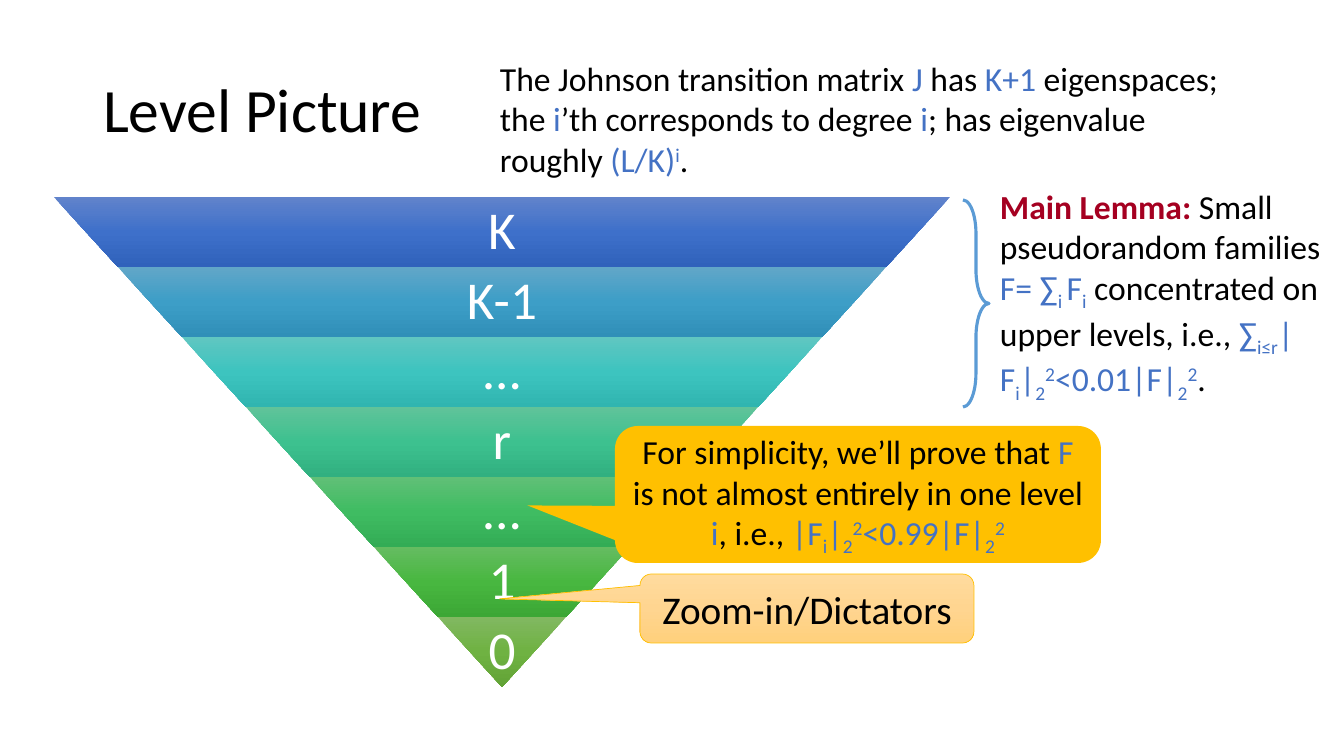
from copy import deepcopy

from pptx import Presentation
from pptx.dml.color import RGBColor
from pptx.enum.shapes import MSO_SHAPE
from pptx.enum.text import MSO_ANCHOR, PP_ALIGN
from pptx.oxml.ns import qn
from pptx.util import Pt

PX = 914400 / 100.8
BLACK, BLUE, RED, WHITE = "000000", "4472C4", "A50021", "FFFFFF"
SUB, SUPER = -25000, 30000


def px(*lengths):
    return [round(length * PX) for length in lengths]


def color(value):
    return RGBColor.from_string(value)


presentation = Presentation()
presentation.slide_width, presentation.slide_height = px(1344, 756)
slide = presentation.slides.add_slide(presentation.slide_layouts[5])
shapes = slide.shapes

title = shapes.title
title.left, title.top, title.width, title.height = px(93, 40, 1159, 146)
title.text_frame.text = "Level Picture"
title.text_frame.vertical_anchor = MSO_ANCHOR.MIDDLE
paragraph = title.text_frame.paragraphs[0]
paragraph.alignment = PP_ALIGN.LEFT
paragraph.line_spacing = 0.9
paragraph.font.name = "Calibri"
paragraph.font.size = Pt(44)
paragraph.font.color.rgb = color(BLACK)

levels = [
    ("K", ["6183CB", "3E70CA", "3062BB"]),
    ("K-1", ["61A6C8", "3D9EC7", "308FB8"]),
    ("…", ["60C6C1", "3DC4BF", "30B5B0"]),
    ("r", ["60C39A", "3DC18F", "31B080"]),
    ("...", ["60C077", "3FBC62", "33AC55"]),
    ("1", ["65BC61", "48B740", "3CA735"]),
    ("0", ["81B861", "6FB242", "62A336"]),
]
FUNNEL_CENTER, FUNNEL_TOP, LEVEL_HEIGHT, SLANT = 502, 197, 70, 64
gradients = []
for index, (label, stops) in enumerate(levels):
    half_width = SLANT * (len(levels) - index)
    top = FUNNEL_TOP + LEVEL_HEIGHT * index
    band = shapes.add_shape(
        MSO_SHAPE.TRAPEZOID,
        *px(FUNNEL_CENTER - half_width, top, 2 * half_width, LEVEL_HEIGHT))
    band.rotation = 180
    band.adjustments[0] = SLANT / LEVEL_HEIGHT
    band.shadow.inherit = False
    band.line.fill.background()
    gradients.append((band, stops))

    text_half = max(SLANT, round(half_width * 0.65))
    box = shapes.add_textbox(
        *px(FUNNEL_CENTER - text_half, top, 2 * text_half, LEVEL_HEIGHT))
    frame = box.text_frame
    frame.word_wrap = True
    frame.vertical_anchor = MSO_ANCHOR.MIDDLE
    frame.margin_left = frame.margin_right = px(5)[0]
    frame.margin_top = frame.margin_bottom = px(5)[0]
    frame.text = label
    paragraph = frame.paragraphs[0]
    paragraph.alignment = PP_ALIGN.CENTER
    paragraph.line_spacing = 0.9
    paragraph.font.name = "Calibri"
    paragraph.font.size = Pt(38)
    paragraph.font.color.rgb = color(WHITE)

eigenspaces = shapes.add_textbox(*px(490, 53, 770, 132))

dictators = shapes.add_shape(
    MSO_SHAPE.ROUNDED_RECTANGULAR_CALLOUT, *px(640, 574, 334, 69))
dictators.adjustments[0] = -0.92
dictators.adjustments[1] = -0.14
dictators.line.color.rgb = color("FFC000")
dictators.line.width = Pt(0.5)
gradients.append((dictators, ["FFDB9E", "FFD590", "FFD07C"]))

simplicity = shapes.add_shape(
    MSO_SHAPE.ROUNDED_RECTANGULAR_CALLOUT, *px(615, 426, 486, 137))
simplicity.adjustments[0] = -0.68
simplicity.adjustments[1] = 0.08
simplicity.fill.solid()
simplicity.fill.fore_color.rgb = color("FFC000")
simplicity.line.fill.background()

brace = shapes.add_shape(MSO_SHAPE.RIGHT_BRACE, *px(963, 200, 26, 207))
brace.adjustments[0] = 1.3
brace.shadow.inherit = False
brace.fill.background()
brace.line.color.rgb = color("5B9BD5")
brace.line.width = Pt(2.25)

lemma = shapes.add_textbox(*px(990, 181, 341, 214))

for shape, stops in gradients:
    shape.fill.gradient()
    shape.fill.gradient_angle = 270
    gradient = shape._element.spPr.find(qn("a:gradFill"))
    gradient.set("rotWithShape", "0")
    stop_list = gradient.find(qn("a:gsLst"))
    stop_list.insert(1, deepcopy(stop_list[0]))
    for stop, position, value in zip(shape.fill.gradient_stops, (0, 0.5, 1), stops):
        stop.position = position
        stop.color.rgb = color(value)

norm = [("|", BLUE, 0), ("2", BLUE, SUB), ("2", BLUE, SUPER)]
level_norm = [("|F", BLUE, 0), ("i", BLUE, SUB)] + norm
texts = [
    (eigenspaces, 24, [
        ("The Johnson transition matrix ", BLACK, 0), ("J ", BLUE, 0),
        ("has ", BLACK, 0), ("K+1 ", BLUE, 0),
        ("eigenspaces; the ", BLACK, 0), ("i", BLUE, 0),
        ("’th corresponds to degree ", BLACK, 0), ("i", BLUE, 0),
        ("; has eigenvalue roughly ", BLACK, 0), ("(L/K)", BLUE, 0),
        ("i", BLUE, SUPER), (".", BLACK, 0)]),
    (dictators, 28, [("Zoom-in/Dictators", BLACK, 0)]),
    (simplicity, 24, [
        ("For simplicity, we’ll prove that ", BLACK, 0), ("F", BLUE, 0),
        (" is not almost entirely in one level ", BLACK, 0), ("i", BLUE, 0),
        (", i.e., ", BLACK, 0), *level_norm, ("<0.99|F", BLUE, 0), *norm]),
    (lemma, 24, [
        ("Main Lemma: ", RED, 0), ("Small pseudorandom families ", BLACK, 0),
        ("F= ∑", BLUE, 0), ("i ", BLUE, SUB), ("F", BLUE, 0), ("i", BLUE, SUB),
        (" concentrated on upper levels, i.e., ", BLACK, 0),
        ("∑", BLUE, 0), ("i≤r", BLUE, SUB), *level_norm,
        ("<0.01|F", BLUE, 0), *norm, (".", BLACK, 0)]),
]
for shape, size, runs in texts:
    frame = shape.text_frame
    frame.word_wrap = True
    paragraph = frame.paragraphs[0]
    paragraph.font.name = "Calibri"
    paragraph.font.size = Pt(size)
    if shape in (dictators, simplicity):
        shape.shadow.inherit = False
        frame.vertical_anchor = MSO_ANCHOR.MIDDLE
        paragraph.alignment = PP_ALIGN.CENTER
    for text, value, baseline in runs:
        run = paragraph.add_run()
        run.text = text
        run.font.color.rgb = color(value)
        if value == RED:
            run.font.bold = True
        if baseline:
            run.font._element.set("baseline", str(baseline))

presentation.save("out.pptx")
